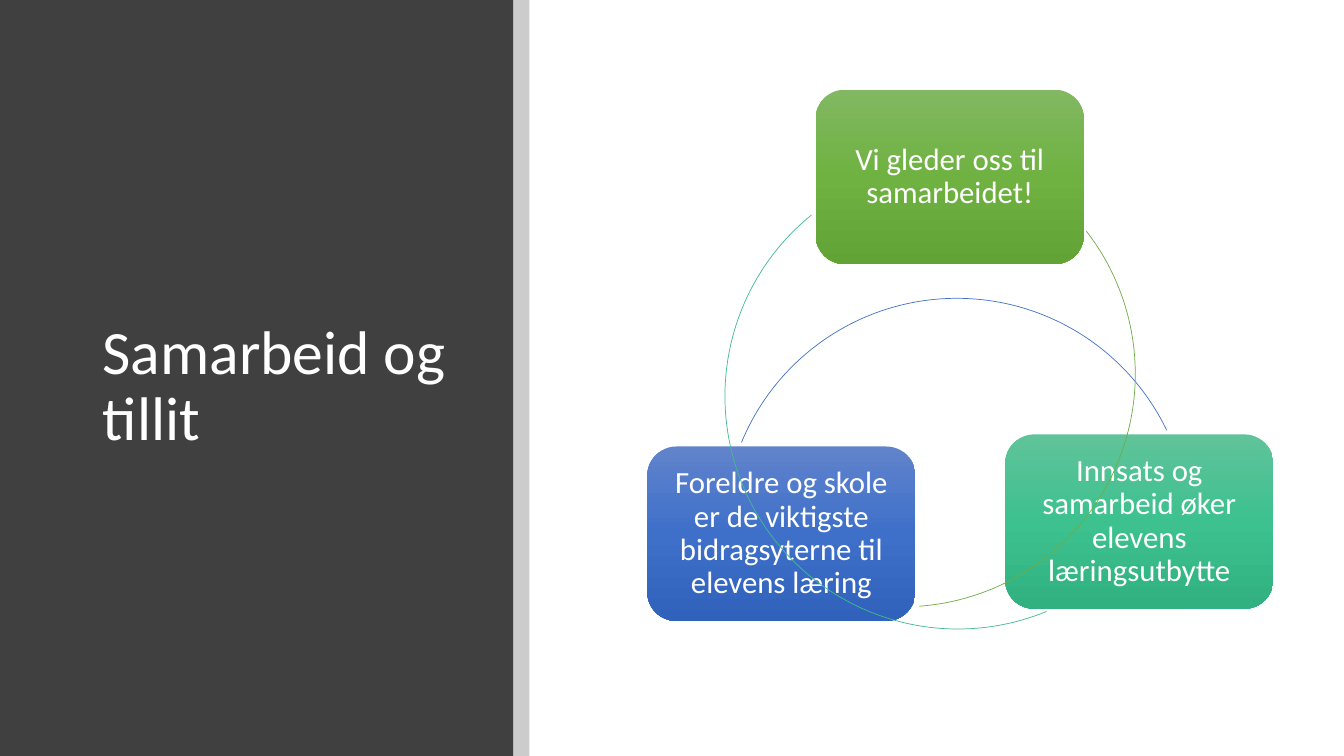
from copy import deepcopy

from lxml import etree
from pptx import Presentation
from pptx.dml.color import RGBColor
from pptx.enum import shapes, text
from pptx.oxml import ns
from pptx.util import Inches, Pt

WHITE = RGBColor(0xFF, 0xFF, 0xFF)
BLACK = RGBColor(0x00, 0x00, 0x00)
CHARCOAL = RGBColor(0x40, 0x40, 0x40)
BLUE = RGBColor(0x44, 0x72, 0xC4)
TEAL = RGBColor(0x43, 0xBB, 0x8D)
GREEN = RGBColor(0x70, 0xAD, 0x47)
BLUE_SHADES = (RGBColor(0x61, 0x83, 0xCB), RGBColor(0x3E, 0x70, 0xCA), RGBColor(0x30, 0x62, 0xBB))
TEAL_SHADES = (RGBColor(0x60, 0xC3, 0x9A), RGBColor(0x3D, 0xC1, 0x8F), RGBColor(0x31, 0xB0, 0x80))
GREEN_SHADES = (RGBColor(0x81, 0xB8, 0x61), RGBColor(0x6F, 0xB2, 0x42), RGBColor(0x62, 0xA3, 0x36))

BOX_W, BOX_H = 2.66, 1.73
ARC_SIZE = 4.62

# Box text, box left and top, gradient, arc left and top, arc start and end in degrees, arc colour
CYCLE = (
    ("Foreldre og skole er de viktigste bidragsyterne til elevens læring",
     (6.42, 4.43), BLUE_SHADES, (7.18, 2.96), (202.4, 334.3), BLUE),
    ("Innsats og samarbeid øker elevens læringsutbytte",
     (9.97, 4.31), TEAL_SHADES, (7.19, 1.62), (67.6, 231.1), TEAL),
    ("Vi gleder oss til samarbeidet!",
     (8.09, 0.89), GREEN_SHADES, (6.64, 1.4), (322.2, 85.8), GREEN),
)


def write(sp, words, size, align=text.PP_ALIGN.LEFT, inset=None):
    tf = sp.text_frame
    tf.word_wrap = True
    tf.vertical_anchor = text.MSO_ANCHOR.MIDDLE
    if inset is not None:
        tf.margin_left = tf.margin_right = tf.margin_top = tf.margin_bottom = Inches(inset)
    p = tf.paragraphs[0]
    p.alignment = align
    p.line_spacing = 0.9
    r = p.add_run()
    r.text = words
    r.font.name = "Calibri"
    r.font.size = Pt(size)
    r.font.color.rgb = WHITE


class Deck:
    def __init__(self):
        self.prs = Presentation()
        self.prs.slide_width = Inches(13.33)
        self.prs.slide_height = Inches(7.5)
        self.s = self.prs.slides.add_slide(self.prs.slide_layouts[6])

    def shape(self, kind, left, top, width, height):
        sp = self.s.shapes.add_shape(
            kind, Inches(left), Inches(top), Inches(width), Inches(height))
        sp.shadow.inherit = False
        sp.line.fill.background()
        return sp

    def panel(self, left, width, color, alpha=None):
        """Full-height band; alpha is its opacity in percent."""
        sp = self.shape(shapes.MSO_SHAPE.RECTANGLE, left, 0, width, 7.5)
        sp.fill.solid()
        sp.fill.fore_color.rgb = color
        if alpha is not None:
            clr = sp._element.spPr.find(".//" + ns.qn("a:srgbClr"))
            etree.SubElement(clr, ns.qn("a:alpha"), val=str(alpha * 1000))

    def title(self, words):
        sp = self.s.shapes.add_textbox(Inches(0.92), Inches(0.89), Inches(3.65), Inches(5.91))
        write(sp, words, 44)

    def box(self, words, left, top, shades):
        sp = self.shape(shapes.MSO_SHAPE.ROUNDED_RECTANGLE, left, top, BOX_W, BOX_H)
        sp.fill.gradient()
        sp.fill.gradient_angle = 270
        stops = sp._element.spPr.find(".//" + ns.qn("a:gsLst"))
        stops.append(deepcopy(stops[-1]))
        for stop, color, position in zip(sp.fill.gradient_stops, shades, (0, 0.5, 1)):
            stop.color.rgb = color
            stop.position = position
        write(sp, words, 22, align=text.PP_ALIGN.CENTER, inset=0.09)

    def arc(self, left, top, angles, color):
        """Clockwise arc between two angles in degrees."""
        sp = self.shape(shapes.MSO_SHAPE.ARC, left, top, ARC_SIZE, ARC_SIZE)
        for i, degrees in enumerate(angles):
            sp.adjustments[i] = degrees * 0.6  # 60000 units a degree, scaled by 100000
        sp.fill.background()
        sp.line.color.rgb = color
        sp.line.width = Pt(0.5)


def main():
    deck = Deck()
    deck.panel(0, 5.09, CHARCOAL)
    deck.title("Samarbeid og tillit")
    deck.panel(5.09, 0.16, BLACK, alpha=20)
    for words, box_at, shades, arc_at, angles, color in CYCLE:
        deck.box(words, *box_at, shades)
        deck.arc(*arc_at, angles, color)
    deck.prs.save("out.pptx")


if __name__ == "__main__":
    main()
